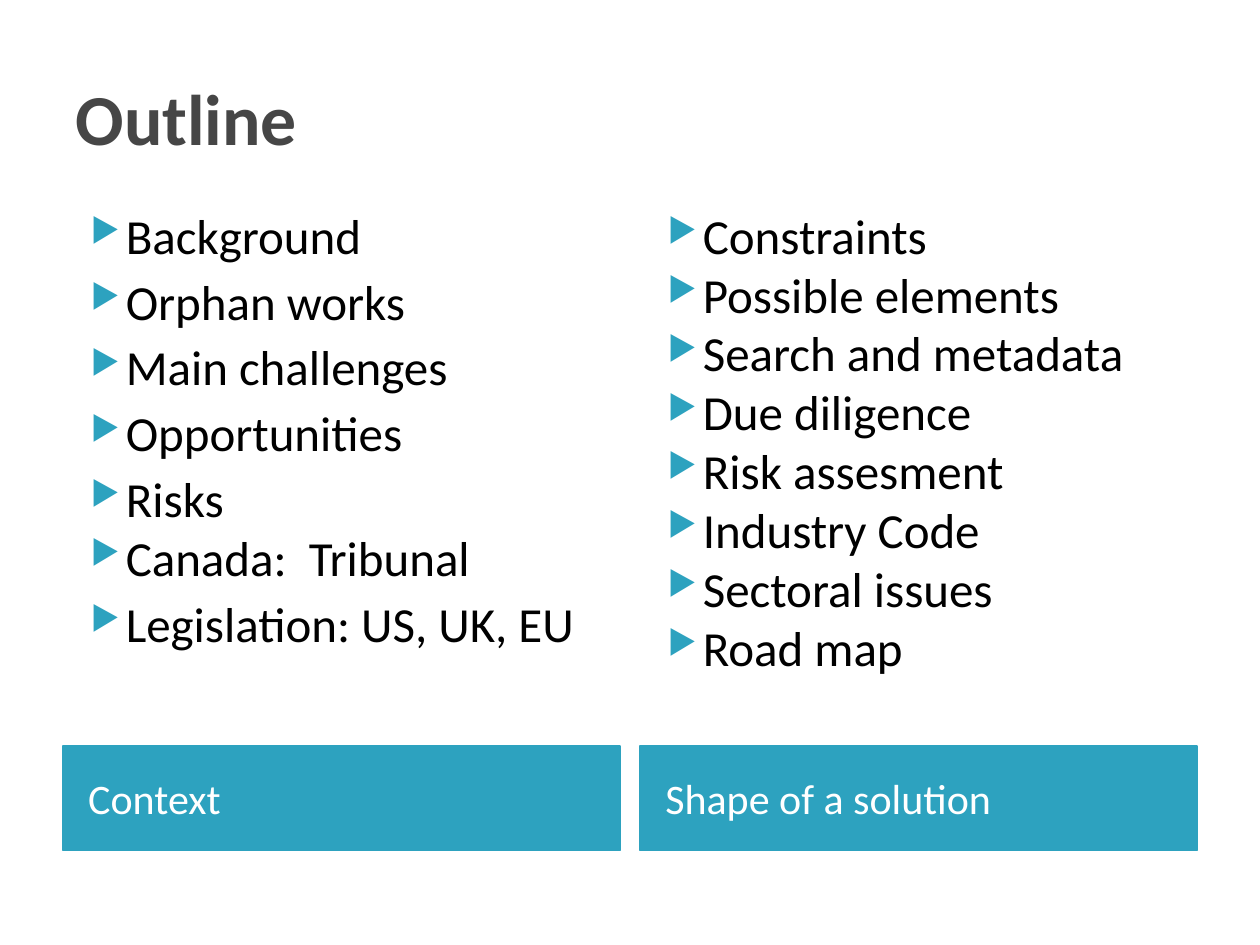
from dataclasses import dataclass

from lxml.etree import SubElement
from pptx import Presentation
from pptx.dml.color import RGBColor
from pptx.enum.shapes import MSO_SHAPE
from pptx.enum.text import MSO_ANCHOR, PP_ALIGN
from pptx.oxml.ns import qn
from pptx.util import Inches, Pt


@dataclass(frozen=True)
class Theme:
    font: str = "Calibri"
    accent: str = "2DA2BF"
    title: str = "464646"
    text: str = "000000"
    on_accent: str = "FFFFFF"
    title_size: int = 41
    list_size: int = 28
    label_size: int = 24
    space_before: int = 4


THEME = Theme()

# Two-column grid, in inches
MARGIN, GUTTER = 0.5, 0.16
COLUMN_WIDTH = (10 - 2 * MARGIN - GUTTER) / 2
TITLE_ROW = (0.3, 1.25)
LIST_ROW = (1.58, 4.31)
LABEL_ROW = (5.92, 0.83)

# Label, items, and the items set with space above them
COLUMNS = [
    ("Context",
     ["Background", "Orphan works", "Main challenges", "Opportunities",
      "Risks", "Canada:  Tribunal", "Legislation: US, UK, EU"],
     {1, 2, 3, 4, 6}),
    ("Shape of a solution",
     ["Constraints", "Possible elements", "Search and metadata",
      "Due diligence", "Risk assesment", "Industry Code",
      "Sectoral issues", "Road map"],
     set()),
]


def cell(column, row):
    """Position and size of a grid cell."""
    left = MARGIN + column * (COLUMN_WIDTH + GUTTER)
    top, height = row
    return [Inches(value) for value in (left, top, COLUMN_WIDTH, height)]


def style(paragraph, size, color, bold=False):
    paragraph.alignment = PP_ALIGN.LEFT
    for run in paragraph.runs:
        run.font.name = THEME.font
        run.font.size = Pt(size)
        run.font.bold = bold
        run.font.color.rgb = RGBColor.from_string(color)


def add_bullet(paragraph):
    properties = paragraph._p.get_or_add_pPr()
    properties.set("marL", str(Inches(0.4)))
    properties.set("indent", str(Inches(-0.28)))
    color = SubElement(properties, qn("a:buClr"))
    SubElement(color, qn("a:srgbClr"), val=THEME.accent)
    SubElement(properties, qn("a:buSzPct"), val="68000")
    SubElement(properties, qn("a:buChar"), char="▶")


def set_title(slide, text):
    title = slide.shapes.title
    top, height = TITLE_ROW
    title.left, title.top = Inches(MARGIN), Inches(top)
    title.width, title.height = Inches(10 - 2 * MARGIN), Inches(height)
    title.text_frame.text = text
    title.text_frame.vertical_anchor = MSO_ANCHOR.MIDDLE
    style(title.text_frame.paragraphs[0], THEME.title_size, THEME.title, True)


def add_list(slide, column, items, spaced):
    frame = slide.shapes.add_textbox(*cell(column, LIST_ROW)).text_frame
    frame.word_wrap = True
    frame.text = "\n".join(items)
    for index, paragraph in enumerate(frame.paragraphs):
        add_bullet(paragraph)
        paragraph.space_before = Pt(THEME.space_before if index in spaced else 0)
        style(paragraph, THEME.list_size, THEME.text)


def add_label(slide, column, text):
    shape = slide.shapes.add_shape(MSO_SHAPE.RECTANGLE, *cell(column, LABEL_ROW))
    shape.shadow.inherit = False
    shape.fill.solid()
    shape.fill.fore_color.rgb = RGBColor.from_string(THEME.accent)
    shape.line.color.rgb = RGBColor.from_string(THEME.accent)
    shape.line.width = Pt(0.75)
    frame = shape.text_frame
    frame.margin_left = Inches(0.2)
    frame.vertical_anchor = MSO_ANCHOR.MIDDLE
    frame.text = text
    style(frame.paragraphs[0], THEME.label_size, THEME.on_accent)


def main():
    presentation = Presentation()
    presentation.slide_width, presentation.slide_height = Inches(10), Inches(7.5)
    slide = presentation.slides.add_slide(presentation.slide_layouts[5])
    set_title(slide, "Outline")
    # Each column: bulleted list above a coloured label
    for column, (label, items, spaced) in enumerate(COLUMNS):
        add_label(slide, column, label)
        add_list(slide, column, items, spaced)
    presentation.save("out.pptx")


if __name__ == "__main__":
    main()
